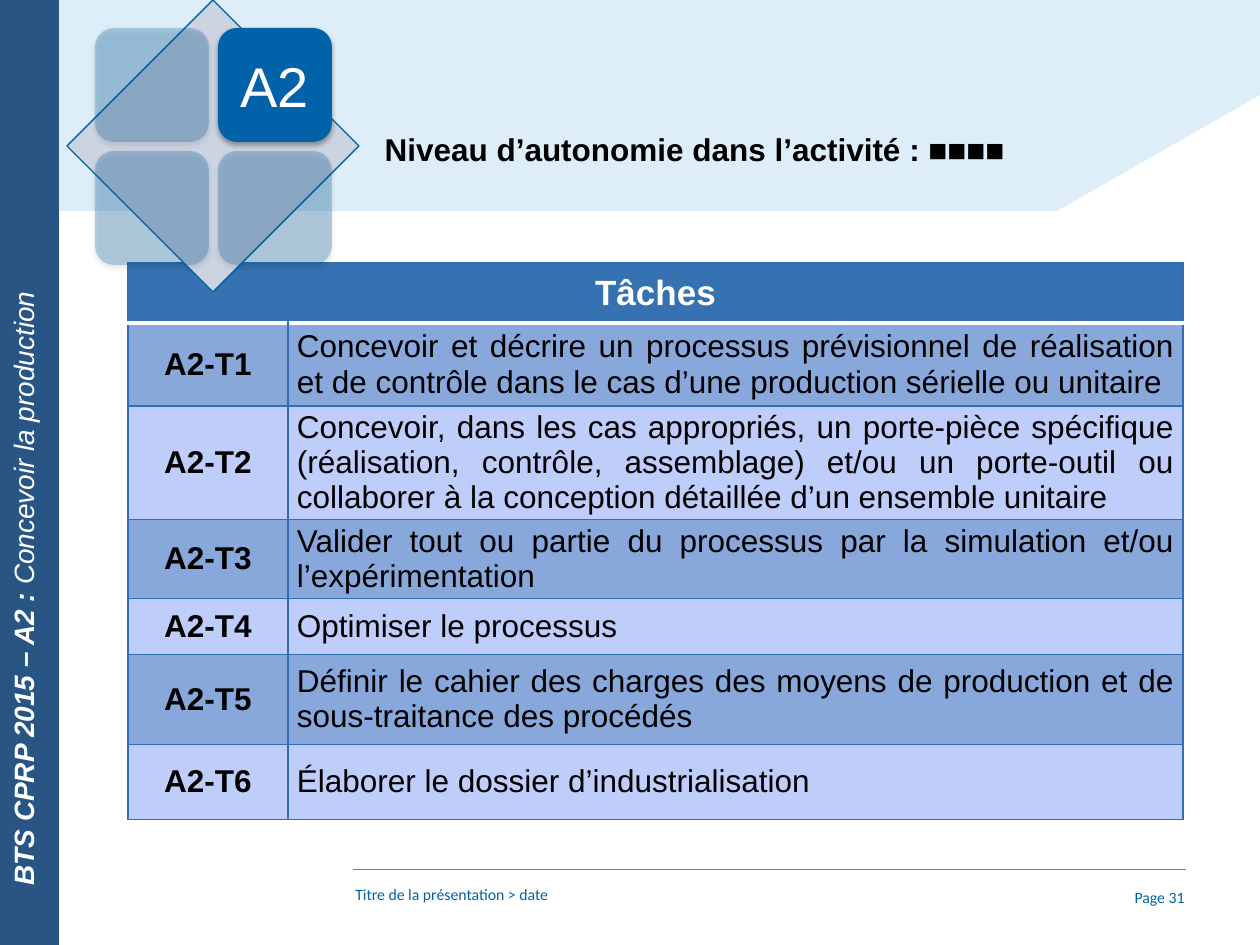
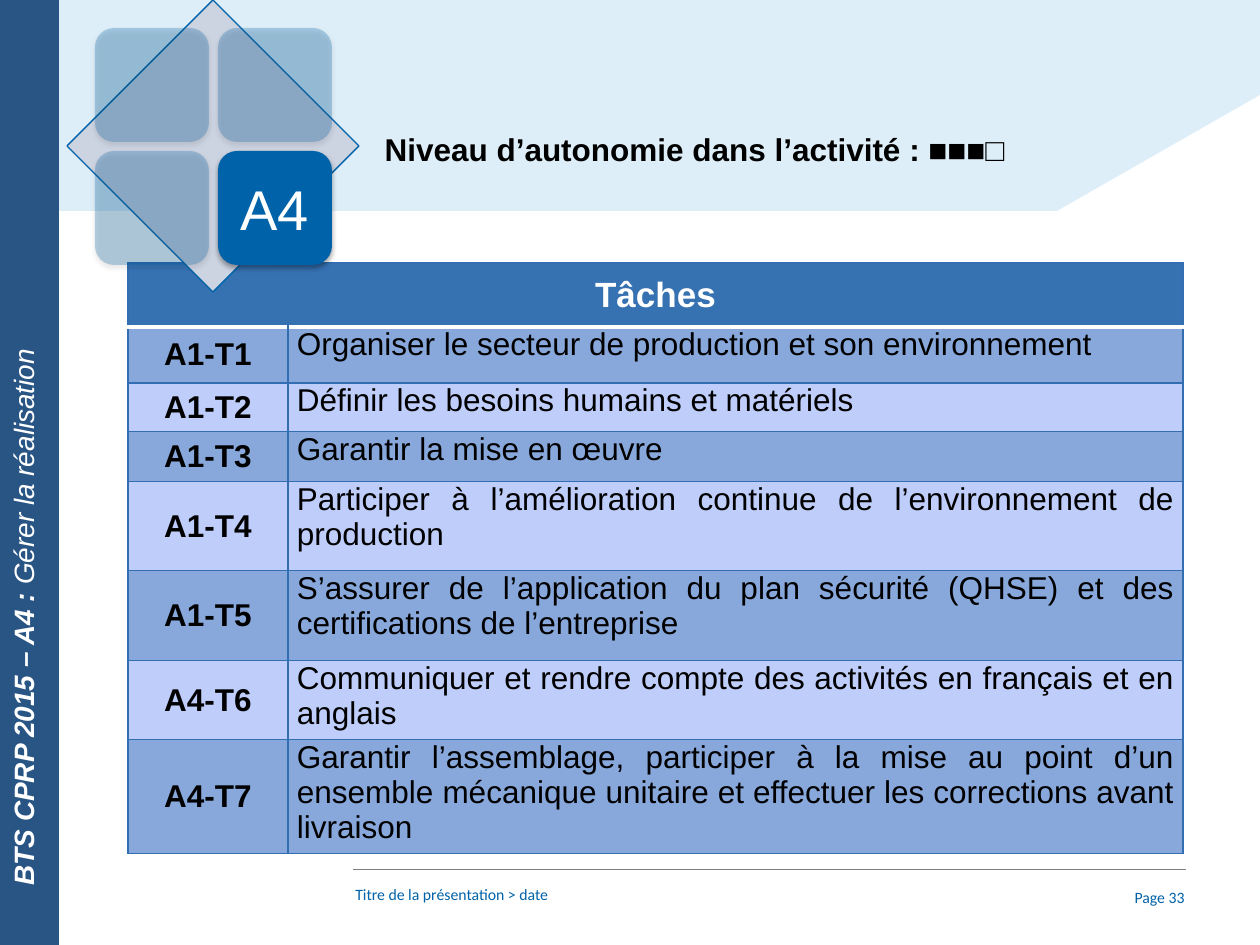
from dataclasses import dataclass
from typing import Any, NamedTuple, Optional

from lxml.etree import SubElement
from pptx import Presentation
from pptx.dml.color import RGBColor
from pptx.enum.shapes import MSO_CONNECTOR, MSO_SHAPE as Shape
from pptx.enum.text import MSO_ANCHOR as Anchor, PP_ALIGN as Align
from pptx.oxml.ns import qn
from pptx.util import Emu, Pt

EMU_PER_PX = 914400 / 126
COLORS = {
    "band": "DEEEF8", "sidebar": "295585", "accent": "0062A8", "rule": "7F7F7F",
    "diamond": "CCD3E1", "header": "3671B2", "border": "326EB1",
    "odd_row": "88A8DC", "even_row": "BECDFA", "white": "FFFFFF", "black": "000000",
}
FORMATS: dict[str, dict[str, Any]] = {
    "title": {"name": "Arial", "size": Pt(18), "bold": True},
    "sidebar_bold": {"name": "Arial", "size": Pt(16), "bold": True, "italic": True},
    "sidebar": {"name": "Arial", "size": Pt(16), "bold": False, "italic": True},
    "footer": {"name": "Calibri", "size": Pt(9)},
    "tile": {"name": "Arial", "size": Pt(32)},
    "header": {"name": "Arial", "size": Pt(20), "bold": True},
    "code": {"name": "Arial", "size": Pt(18), "bold": True},
    "task": {"name": "Arial", "size": Pt(18), "bold": False},
}
BAND_POINTS = [(0, 0), (0, 211), (1057, 211), (1260, 95)]
TILE_LEFT, TILE_TOP, TILE_SIZE, TILE_PITCH = 95, 28, 114, 123
TABLE_LEFT, TABLE_TOP = 128, 263
COLUMN_WIDTHS = (160, 895)


class Area(NamedTuple):
    left: int
    top: int
    width: int
    height: int


class Task(NamedTuple):
    code: str
    text: str
    height: int


@dataclass
class Activity:
    number: int
    name: str
    autonomy: str
    page_number: int
    header_height: int
    task_anchor: Any
    tasks: list[Task]

    @property
    def code(self) -> str:
        return f"A{self.number}"


ACTIVITIES = [
    Activity(2, "Concevoir la production", "■■■■", 31, 60, Anchor.MIDDLE, [
        Task("A2-T1", "Concevoir et décrire un processus prévisionnel de réalisation et de "
             "contrôle dans le cas d’une production sérielle ou unitaire", 83),
        Task("A2-T2", "Concevoir, dans les cas appropriés, un porte-pièce spécifique "
             "(réalisation, contrôle, assemblage) et/ou un porte-outil ou collaborer à la "
             "conception détaillée d’un ensemble unitaire", 113),
        Task("A2-T3", "Valider tout ou partie du processus par la simulation et/ou "
             "l’expérimentation", 79),
        Task("A2-T4", "Optimiser le processus", 56),
        Task("A2-T5", "Définir le cahier des charges des moyens de production et de "
             "sous-traitance des procédés", 90),
        Task("A2-T6", "Élaborer le dossier d’industrialisation", 75),
    ]),
    Activity(4, "Gérer la réalisation", "■■■□", 33, 64, Anchor.TOP, [
        Task("A1-T1", "Organiser le secteur de production et son environnement", 56),
        Task("A1-T2", "Définir les besoins humains et matériels", 49),
        Task("A1-T3", "Garantir la mise en œuvre", 50),
        Task("A1-T4", "Participer à l’amélioration continue de l’environnement de "
             "production", 89),
        Task("A1-T5", "S’assurer de l’application du plan sécurité (QHSE) et des "
             "certifications de l’entreprise", 90),
        Task("A4-T6", "Communiquer et rendre compte des activités en français et en "
             "anglais", 79),
        Task("A4-T7", "Garantir l’assemblage, participer à la mise au point d’un ensemble "
             "mécanique unitaire et effectuer les corrections avant livraison", 113),
    ]),
]


def px(length: int) -> Emu:
    return Emu(round(length * EMU_PER_PX))


def color(name: str) -> RGBColor:
    return RGBColor.from_string(COLORS[name])


def set_attributes(target: Any, values: dict[str, Any]) -> None:
    for name, value in values.items():
        setattr(target, name, value)


def add_span(para: Any, text: str, style: str, ink: str) -> None:
    span = para.add_run()
    span.text = text
    set_attributes(span.font, FORMATS[style])
    span.font.color.rgb = color(ink)


def add_box(page: Any, kind: Any, area: Area, fill: str, line: Optional[str] = None) -> Any:
    box = page.shapes.add_shape(kind, *map(px, area))
    paint(box, fill, line)
    return box


def paint(box: Any, fill: str, line: Optional[str] = None) -> None:
    box.shadow.inherit = False
    box.fill.solid()
    box.fill.fore_color.rgb = color(fill)
    if line:
        box.line.color.rgb = color(line)
        box.line.width = Pt(0.75)
    else:
        box.line.fill.background()


def add_label(page: Any, area: Area, text: str, anchor: Any, align: Any) -> None:
    frame = page.shapes.add_textbox(*map(px, area)).text_frame
    set_attributes(frame, {"word_wrap": True, "vertical_anchor": anchor})
    frame.paragraphs[0].alignment = align
    add_span(frame.paragraphs[0], text, "footer", "accent")


def add_background(page: Any, page_number: int) -> None:
    outline = page.shapes.build_freeform(px(1260), 0, 1.0)
    outline.add_line_segments([(px(x), px(y)) for x, y in BAND_POINTS], close=True)
    paint(outline.convert_to_shape(), "band")
    add_label(page, Area(343, 879, 745, 50), "Titre de la présentation > date",
              Anchor.TOP, Align.LEFT)
    rule = page.shapes.add_connector(MSO_CONNECTOR.STRAIGHT, px(353), px(869), px(1186), px(869))
    rule.line.color.rgb = color("rule")
    rule.line.width = Pt(0.5)
    SubElement(rule.element.spPr, qn("a:effectLst"))
    add_label(page, Area(1086, 876, 111, 43), f"Page {page_number}",
              Anchor.MIDDLE, Align.RIGHT)


def add_sidebar(page: Any, activity: Activity) -> None:
    frame = add_box(page, Shape.RECTANGLE, Area(0, 0, 59, 945), "sidebar").text_frame
    frame.vertical_anchor = Anchor.TOP
    frame.paragraphs[0].alignment = Align.LEFT
    frame._txBody.bodyPr.set("vert", "vert270")
    para = frame.paragraphs[0]
    para._p.get_or_add_pPr().set("marL", str(px(47)))
    add_span(para, f"BTS CPRP 2015 – {activity.code} : ", "sidebar_bold", "white")
    add_span(para, activity.name, "sidebar", "white")


def add_title(page: Any, autonomy: str) -> None:
    title = page.shapes.title
    set_attributes(title, dict(zip(Area._fields, map(px, Area(372, 124, 690, 50)))))
    title.element.getparent().append(title.element)
    set_attributes(title.text_frame, {"word_wrap": True, "vertical_anchor": Anchor.TOP})
    para = title.text_frame.paragraphs[0]
    para.alignment = Align.LEFT
    add_span(para, f"Niveau d’autonomie dans l’activité : {autonomy}", "title", "black")


def add_tile_shadow(tile: Any) -> None:
    effects = tile.element.spPr.find(qn("a:effectLst"))
    shadow = SubElement(effects, qn("a:outerShdw"), blurRad=str(Pt(3.1)), dist=str(Pt(1.8)),
                        dir="5400000", rotWithShape="0")
    ink = SubElement(shadow, qn("a:srgbClr"), val=COLORS["black"])
    SubElement(ink, qn("a:alpha"), val="35000")


def add_activity_mark(page: Any, activity: Activity) -> None:
    add_box(page, Shape.DIAMOND, Area(67, 0, 292, 292), "diamond", "accent")
    for index in range(4):
        row, column = divmod(index, 2)
        area = Area(TILE_LEFT + column * TILE_PITCH, TILE_TOP + row * TILE_PITCH,
                    TILE_SIZE, TILE_SIZE)
        tile = add_box(page, Shape.ROUNDED_RECTANGLE, area, "accent")
        if index + 1 == activity.number:
            frame = tile.text_frame
            set_attributes(frame, {"margin_left": 0, "margin_right": 0,
                                   "margin_bottom": px(6), "vertical_anchor": Anchor.MIDDLE})
            frame.paragraphs[0].alignment = Align.CENTER
            add_span(frame.paragraphs[0], activity.code, "tile", "white")
        else:
            ink = tile.element.spPr.find(qn("a:solidFill")).find(qn("a:srgbClr"))
            SubElement(ink, qn("a:alpha"), val="26000")
        add_tile_shadow(tile)


def set_borders(cell: Any, white_side: Optional[str]) -> None:
    for side in "LRTB":
        ink, width = ("white", 2) if side == white_side else ("border", 0.75)
        line = SubElement(cell._tc.get_or_add_tcPr(), qn(f"a:ln{side}"), w=str(Pt(width)))
        fill = SubElement(line, qn("a:solidFill"))
        SubElement(fill, qn("a:srgbClr"), val=COLORS[ink])


def fill_cell(cell: Any, text: str, style: str, ink: str, fill: str, align: Any,
              anchor: Any, white_side: Optional[str] = None) -> None:
    set_borders(cell, white_side)
    cell.fill.solid()
    cell.fill.fore_color.rgb = color(fill)
    set_attributes(cell, {"vertical_anchor": anchor, "margin_left": px(9),
                          "margin_right": px(9), "margin_top": 0, "margin_bottom": 0})
    para = cell.text_frame.paragraphs[0]
    para.alignment = align
    if text:
        add_span(para, text, style, ink)


def add_task_table(page: Any, activity: Activity) -> None:
    heights = [activity.header_height, *(task.height for task in activity.tasks)]
    area = Area(TABLE_LEFT, TABLE_TOP, sum(COLUMN_WIDTHS), sum(heights))
    table = page.shapes.add_table(len(heights), 2, *map(px, area)).table
    for column, width in zip(table.columns, COLUMN_WIDTHS):
        column.width = px(width)
    for row, height in zip(table.rows, heights):
        row.height = px(height)
    table.cell(0, 0).merge(table.cell(0, 1))
    for column, text in enumerate(("Tâches", "")):
        fill_cell(table.cell(0, column), text, "header", "white", "header",
                  Align.CENTER, Anchor.MIDDLE, "B")
    for index, task in enumerate(activity.tasks, start=1):
        fill = "odd_row" if index % 2 else "even_row"
        white_side = "T" if index == 1 else None
        fill_cell(table.cell(index, 0), task.code, "code", "black", fill,
                  Align.CENTER, Anchor.MIDDLE, white_side)
        fill_cell(table.cell(index, 1), task.text, "task", "black", fill,
                  Align.JUSTIFY, activity.task_anchor, white_side)


def main() -> None:
    deck = Presentation()
    deck.slide_width, deck.slide_height = px(1260), px(945)
    for activity in ACTIVITIES:
        page = deck.slides.add_slide(deck.slide_layouts[5])
        add_background(page, activity.page_number)
        add_sidebar(page, activity)
        add_task_table(page, activity)
        add_title(page, activity.autonomy)
        add_activity_mark(page, activity)
    deck.save("out.pptx")


if __name__ == "__main__":
    main()
